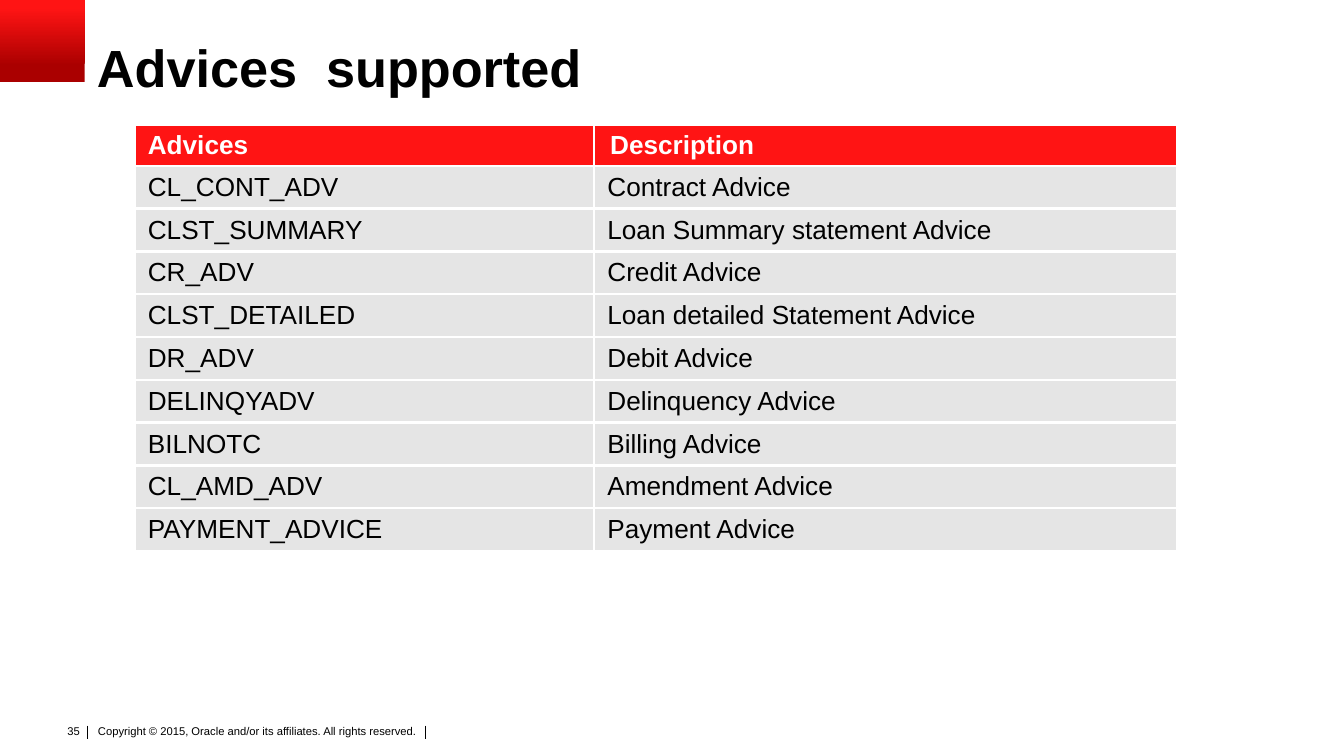
from lxml import etree
from pptx import Presentation
from pptx.dml.color import RGBColor
from pptx.enum.shapes import MSO_CONNECTOR, MSO_SHAPE
from pptx.enum.text import MSO_ANCHOR, PP_ALIGN
from pptx.oxml.ns import qn
from pptx.util import Pt

STRAIGHT = MSO_CONNECTOR.STRAIGHT
RECTANGLE = MSO_SHAPE.RECTANGLE
TOP, MIDDLE, BOTTOM = MSO_ANCHOR.TOP, MSO_ANCHOR.MIDDLE, MSO_ANCHOR.BOTTOM
LEFT, RIGHT = PP_ALIGN.LEFT, PP_ALIGN.RIGHT

# Content
TITLE = "Advices  supported"
COPYRIGHT = "Copyright © 2015, Oracle and/or its affiliates. All rights reserved."
PAGE_NUMBER = "35"
ROWS = [
    ("Advices", "Description"),
    ("CL_CONT_ADV", "Contract Advice"),
    ("CLST_SUMMARY", "Loan Summary statement Advice"),
    ("CR_ADV", "Credit Advice"),
    ("CLST_DETAILED", "Loan detailed Statement Advice"),
    ("DR_ADV", "Debit Advice"),
    ("DELINQYADV", "Delinquency Advice"),
    ("BILNOTC", "Billing Advice"),
    ("CL_AMD_ADV", "Amendment Advice"),
    ("PAYMENT_ADVICE", "Payment Advice"),
]

# Format, lengths in points
COLORS = {"black": "000000", "white": "FFFFFF", "red": "FF1414",
          "dark red": "AA0000", "gray": "E5E5E5"}
FONTS = {
    "title": {"size": Pt(28), "bold": True},
    "header": {"size": Pt(14), "bold": True},
    "body": {"size": Pt(14), "bold": False},
    "footer": {"size": Pt(6), "bold": False},
}
TABLE_LEFT, TABLE_TOP = 72, 67
COLUMN_WIDTHS = (246.2, 312.5)
HEADER_HEIGHT, ROW_HEIGHT = 21.3, 22.95
BORDER_WIDTH = 1.5
DIVIDERS = (46.8, 228)


def rgb(name):
    return RGBColor.from_string(COLORS[name])


def write(paragraph, text, style, color="black"):
    paragraph.text = text
    font = paragraph.font
    for name, value in {"name": "Arial", **FONTS[style]}.items():
        setattr(font, name, value)
    font.color.rgb = rgb(color)


def add_text(slide, box, text, style, anchor=TOP, align=LEFT):
    frame = slide.shapes.add_textbox(*map(Pt, box)).text_frame
    settings = {"word_wrap": True, "vertical_anchor": anchor, "margin_left": 0,
                "margin_right": 0, "margin_top": 0, "margin_bottom": 0}
    for name, value in settings.items():
        setattr(frame, name, value)
    paragraph = frame.paragraphs[0]
    write(paragraph, text, style)
    paragraph.alignment = align
    return paragraph


def add_border(cell, sides):
    properties = cell._tc.get_or_add_tcPr()
    for index, side in enumerate(sides):
        line = etree.Element(qn("a:ln" + side), w=str(Pt(BORDER_WIDTH)))
        fill = etree.SubElement(line, qn("a:solidFill"))
        etree.SubElement(fill, qn("a:srgbClr"), val=COLORS["white"])
        properties.insert(index, line)


presentation = Presentation()
presentation.slide_width, presentation.slide_height = Pt(720), Pt(405)
slide = presentation.slides.add_slide(presentation.slide_layouts[6])

# Footer
add_text(slide, (52.5, 388, 192, 16), COPYRIGHT, "footer")
add_text(slide, (28, 388, 14.8, 10), PAGE_NUMBER, "footer", align=RIGHT)
for x in DIVIDERS:
    divider = slide.shapes.add_connector(STRAIGHT, Pt(x), Pt(388.8), Pt(x), Pt(396))
    divider.line.color.rgb = rgb("black")
    divider.line.width = Pt(0.5)
    etree.SubElement(divider._element.spPr, qn("a:effectLst"))

# Corner block
corner = slide.shapes.add_shape(RECTANGLE, 0, 0, Pt(45.4), Pt(44))
corner.shadow.inherit = False
corner.line.fill.background()
corner.fill.gradient()
corner.fill.gradient_angle = 90
for stop, (position, color) in zip(corner.fill.gradient_stops,
                                   [(0.2, "dark red"), (0.9, "red")]):
    stop.position = position
    stop.color.rgb = rgb(color)

# Title
title = add_text(slide, (52, 21.4, 648, 31.7), TITLE, "title", anchor=BOTTOM)
title.line_spacing = 0.9

# Table
heights = [HEADER_HEIGHT] + [ROW_HEIGHT] * (len(ROWS) - 1)
table = slide.shapes.add_table(
    len(ROWS), len(COLUMN_WIDTHS), Pt(TABLE_LEFT), Pt(TABLE_TOP),
    Pt(sum(COLUMN_WIDTHS)), Pt(sum(heights))).table
for column, width in zip(table.columns, COLUMN_WIDTHS):
    column.width = Pt(width)
for row_index, (texts, height) in enumerate(zip(ROWS, heights)):
    table.rows[row_index].height = Pt(height)
    is_header = row_index == 0
    style, color, fill = (("header", "white", "red") if is_header
                          else ("body", "black", "gray"))
    for column_index, text in enumerate(texts):
        cell = table.cell(row_index, column_index)
        indent = 1.5 if is_header and column_index == 1 else 0
        settings = {"vertical_anchor": MIDDLE, "margin_left": Pt(7.2 + indent),
                    "margin_right": Pt(7.2), "margin_top": Pt(2.5),
                    "margin_bottom": Pt(2.5)}
        for name, value in settings.items():
            setattr(cell, name, value)
        cell.fill.solid()
        cell.fill.fore_color.rgb = rgb(fill)
        add_border(cell, "LRTB")
        write(cell.text_frame.paragraphs[0], text, style, color)

presentation.save("out.pptx")
